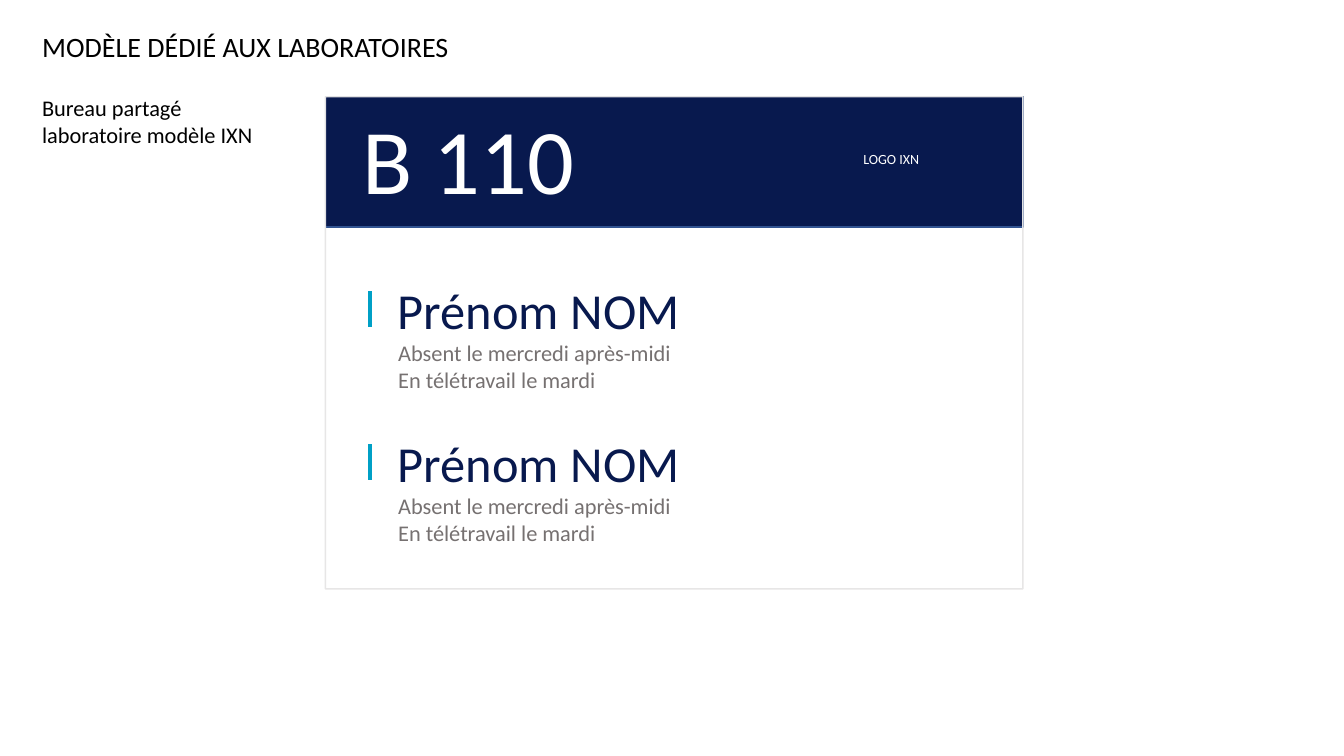
from dataclasses import dataclass

from lxml.etree import SubElement
from pptx import Presentation
from pptx.dml.color import RGBColor as Rgb
from pptx.enum.shapes import MSO_CONNECTOR as Link, MSO_SHAPE as Form
from pptx.enum.text import MSO_ANCHOR as Anchor, MSO_AUTO_SIZE as Auto, PP_ALIGN as Align
from pptx.oxml.ns import qn
from pptx.shapes.autoshape import Shape
from pptx.slide import Slide
from pptx.util import Cm, Pt

HUES = {
    "navy": "08194E",
    "edge": "325491",
    "pale": "E7E6E6",
    "cyan": "00A0C6",
    "gray": "767171",
    "white": "FFFFFF",
    "black": "000000",
}
FONT = "Calibri"
TOP, STEP = 6.91, 3.86  # first person and distance to the next, in cm


@dataclass
class Box:
    left: float
    top: float
    width: float
    height: float


@dataclass
class Label:
    text: str
    box: Box
    size: int
    hue: str


@dataclass
class Person:
    name: str
    days: str


def paint(hue: str) -> Rgb:
    return Rgb.from_string(HUES[hue])


def place(shape: Shape, box: Box) -> None:
    shape.left, shape.top = Cm(box.left), Cm(box.top)
    shape.width, shape.height = Cm(box.width), Cm(box.height)


def write(shape: Shape, label: Label) -> None:
    """Place a text box or placeholder, fill it and format every run."""
    place(shape, label.box)
    frame = shape.text_frame
    frame.text = label.text
    frame.word_wrap = True
    frame.auto_size = Auto.NONE
    frame.vertical_anchor = Anchor.TOP
    for para in frame.paragraphs:
        para.alignment = Align.LEFT
        para.space_before = Pt(0)
        for run in para.runs:
            run.font.name = FONT
            run.font.size = Pt(label.size)
            run.font.color.rgb = paint(label.hue)


def add_label(slide: Slide, label: Label) -> None:
    write(slide.shapes.add_textbox(0, 0, 0, 0), label)


def add_panel(slide: Slide, box: Box, edge: str, fill: str = "") -> Shape:
    panel = slide.shapes.add_shape(Form.RECTANGLE, 0, 0, 0, 0)
    place(panel, box)
    panel.shadow.inherit = False
    if fill:
        panel.fill.solid()
        panel.fill.fore_color.rgb = paint(fill)
    else:
        panel.fill.background()
    panel.line.color.rgb = paint(edge)
    panel.line.width = Pt(1)
    return panel


def add_mark(slide: Slide, left: float, top: float, height: float) -> None:
    mark = slide.shapes.add_connector(
        Link.STRAIGHT, Cm(left), Cm(top), Cm(left), Cm(top + height))
    mark.line.color.rgb = paint("cyan")
    mark.line.width = Pt(2.75)
    SubElement(mark._element.spPr, qn("a:effectLst"))


def strip(shape: Shape) -> None:
    """Remove bullets and indents from a list."""
    for para in shape.text_frame.paragraphs:
        props = para._p.get_or_add_pPr()
        props.set("marL", "0")
        props.set("indent", "0")
        SubElement(props, qn("a:buNone"))


def add_person(slide: Slide, body: Shape, person: Person, top: float) -> None:
    add_label(slide, Label(person.name, Box(9.78, top, 14.48, 1.8), 36, "navy"))
    write(body, Label(person.days, Box(9.78, top + 1.5, 14.48, 1.63), 16, "gray"))
    strip(body)
    add_mark(slide, 9.32, top + 0.43, 0.9)


def main() -> None:
    deck = Presentation()
    deck.slide_width, deck.slide_height = Cm(33.87), Cm(19.05)
    slide = deck.slides.add_slide(deck.slide_layouts.get_by_name("Two Content"))

    add_panel(slide, Box(8.2, 2.44, 17.58, 3.28), "edge", "navy")
    frame = add_panel(slide, Box(8.2, 2.44, 17.58, 12.4), "pale")
    tint = frame.line._ln.find(".//" + qn("a:srgbClr"))
    SubElement(tint, qn("a:alpha"), val="97000")

    write(slide.shapes.title,
          Label("MODÈLE DÉDIÉ AUX LABORATOIRES", Box(0.81, 0.61, 24.94, 1.12), 20, "black"))
    labels = [
        Label("Bureau partagé laboratoire modèle IXN", Box(0.81, 2.24, 6.17, 1.63), 16, "black"),
        Label("B 110", Box(8.89, 2.46, 9.07, 3.07), 66, "white"),
        Label("LOGO IXN", Box(21.51, 3.66, 3.4, 0.69), 10, "white"),
    ]
    for label in labels:
        add_label(slide, label)

    days = "Absent le mercredi après-midi\nEn télétravail le mardi"
    staff = [Person("Prénom NOM", days), Person("Prénom NOM", days)]
    for rank, person in enumerate(staff):
        add_person(slide, slide.placeholders[rank + 1], person, TOP + rank * STEP)

    deck.save("out.pptx")


if __name__ == "__main__":
    main()
